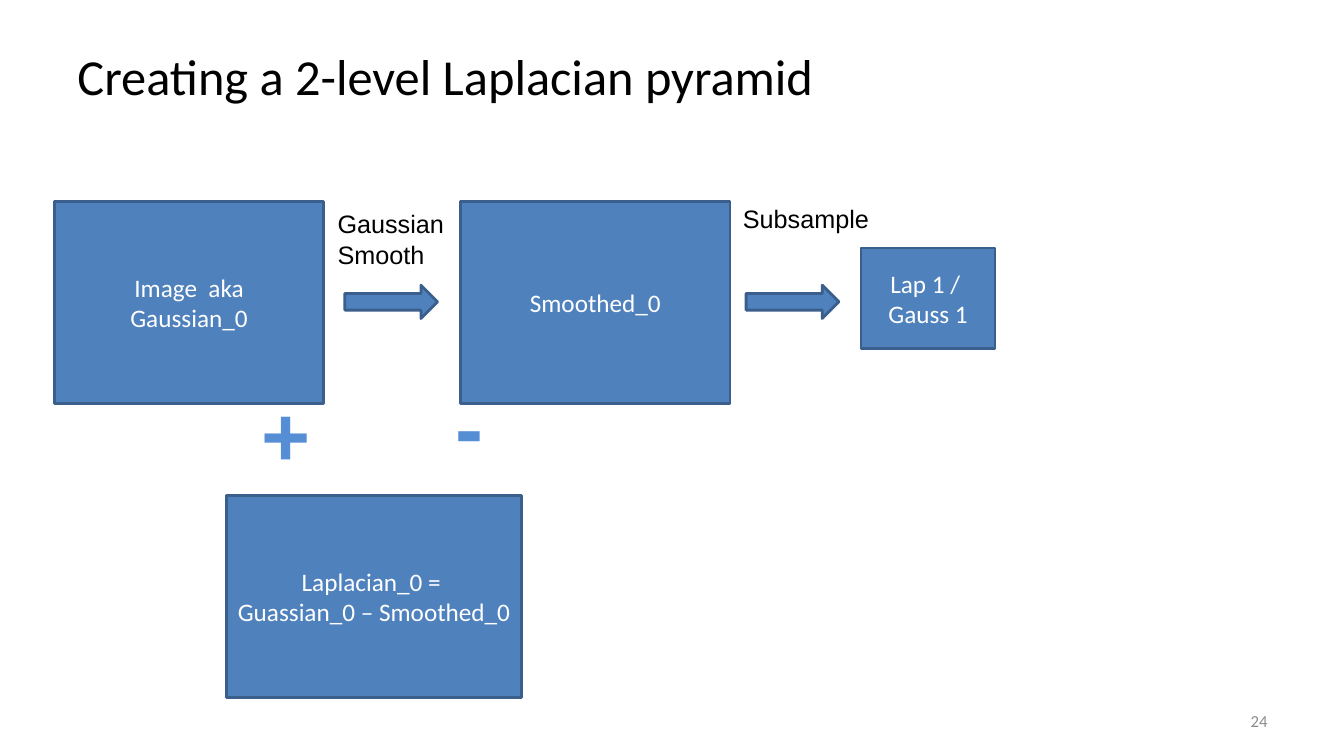
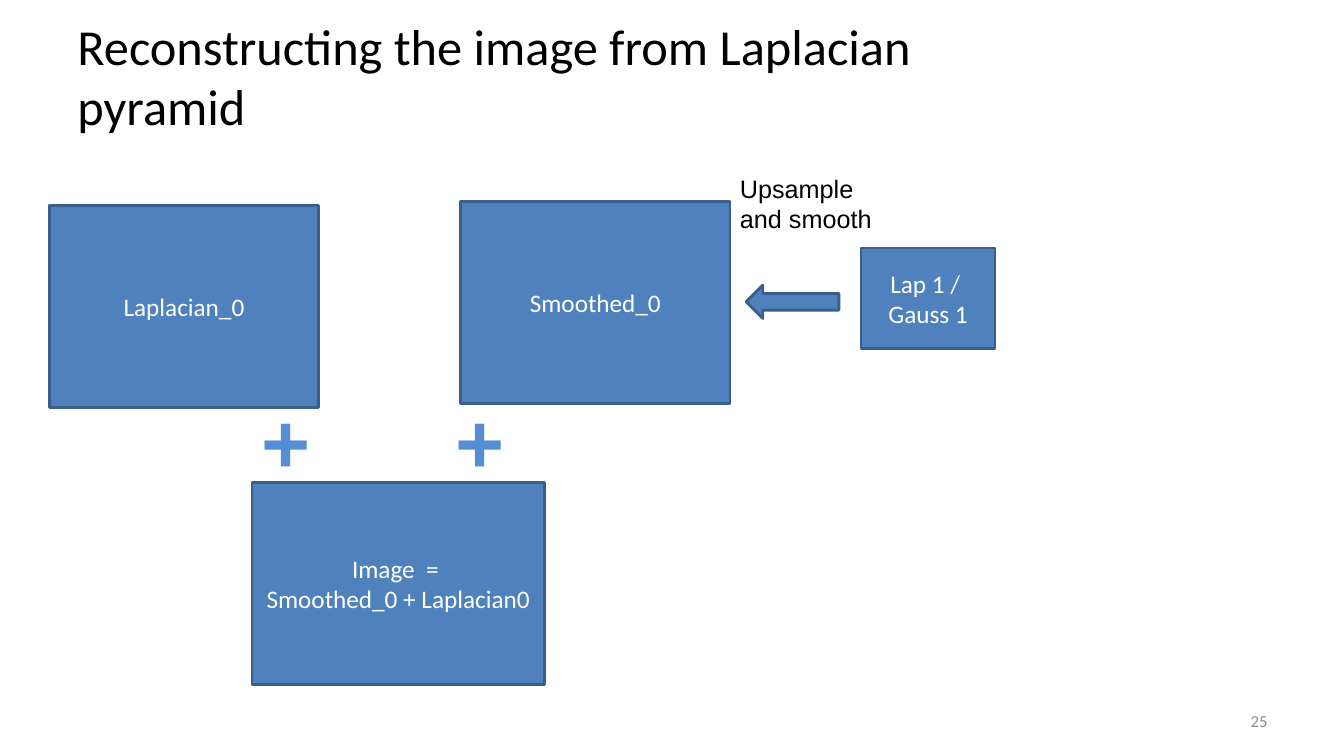
from pptx import Presentation
from pptx.dml.color import RGBColor
from pptx.enum.shapes import MSO_SHAPE
from pptx.enum.text import MSO_ANCHOR, PP_ALIGN
from pptx.util import Inches, Pt

BLACK = RGBColor(0x00, 0x00, 0x00)
WHITE = RGBColor(0xFF, 0xFF, 0xFF)
BLUE = RGBColor(0x4F, 0x81, 0xBD)
DARK_BLUE = RGBColor(0x3A, 0x5F, 0x8C)
SIGN_BLUE = RGBColor(0x55, 0x8E, 0xD5)
GREY = RGBColor(0x8C, 0x8C, 0x8C)

# Boxes are (left, top, width, height) in inches.
TITLE_BOX = (0.67, 0.25, 8.75, 1)
NUMBER_BOX = (9.56, 6.95, 3.11, 0.4)
SMOOTHED_BOX = (4.57, 2, 2.67, 2)
LEVEL_ONE_BOX = (8.54, 2.46, 1.33, 1)
ARROW_TOP, ARROW_WIDTH, ARROW_HEIGHT = 2.83, 0.92, 0.33
SUBSAMPLE_ARROW_LEFT = 7.4


def write_lines(shape, lines, size, color, font_name="Calibri", bold=False,
                align=PP_ALIGN.LEFT, anchor=MSO_ANCHOR.TOP, wrap=True):
    """Fill a shape with one paragraph per line, all in one style."""
    frame = shape.text_frame
    frame.word_wrap = wrap
    frame.vertical_anchor = anchor
    frame.text = "\n".join(lines)
    for paragraph in frame.paragraphs:
        paragraph.alignment = align
        font = paragraph.font
        font.name, font.size, font.bold = font_name, Pt(size), bold
        font.color.rgb = color


def add_text(slide, box, text, size, color, **style):
    text_box = slide.shapes.add_textbox(*map(Inches, box))
    write_lines(text_box, [text], size, color, **style)


def add_blue_shape(slide, kind, box):
    shape = slide.shapes.add_shape(kind, *map(Inches, box))
    shape.shadow.inherit = False
    shape.fill.solid()
    shape.fill.fore_color.rgb = BLUE
    shape.line.color.rgb = DARK_BLUE
    shape.line.width = Pt(2)
    return shape


def add_image_block(slide, box, *lines):
    block = add_blue_shape(slide, MSO_SHAPE.RECTANGLE, box)
    write_lines(block, lines, 18, WHITE,
                align=PP_ALIGN.CENTER, anchor=MSO_ANCHOR.MIDDLE)


def add_step(slide, arrow_kind, arrow_left, label, label_box):
    """Add a block arrow with the name of the operation above it."""
    arrow_box = (arrow_left, ARROW_TOP, ARROW_WIDTH, ARROW_HEIGHT)
    add_blue_shape(slide, arrow_kind, arrow_box)
    add_text(slide, label_box, label, 18, BLACK, font_name="Arial")


def add_sign(slide, sign, left, top):
    add_text(slide, (left, top, 0.69, 1.11), sign, 60, SIGN_BLUE,
             font_name="Arial", bold=True, wrap=False)


def add_pyramid_slide(presentation, title, number):
    """Add a slide with the title, page number and blocks common to both."""
    slide = presentation.slides.add_slide(presentation.slide_layouts[6])
    add_text(slide, TITLE_BOX, title, 36, BLACK, anchor=MSO_ANCHOR.MIDDLE)
    add_text(slide, NUMBER_BOX, str(number), 12, GREY,
             align=PP_ALIGN.RIGHT, anchor=MSO_ANCHOR.MIDDLE)
    add_image_block(slide, SMOOTHED_BOX, "Smoothed_0")
    add_image_block(slide, LEVEL_ONE_BOX, "Lap 1 / ", "Gauss 1")
    return slide


def build_creation_slide(presentation):
    slide = add_pyramid_slide(
        presentation, "Creating a 2-level Laplacian pyramid", 24)
    add_image_block(slide, (0.54, 2, 2.67, 2), "Image  aka", "Gaussian_0")
    add_step(slide, MSO_SHAPE.RIGHT_ARROW, 3.42,
             "Gaussian Smooth", (3.25, 2.02, 1.33, 0.71))
    add_step(slide, MSO_SHAPE.RIGHT_ARROW, SUBSAMPLE_ARROW_LEFT,
             "Subsample", (7.27, 1.97, 1.64, 0.4))
    add_image_block(slide, (2.25, 4.92, 2.92, 2),
                    "Laplacian_0 = ", "Guassian_0 – Smoothed_0")
    add_sign(slide, "+", 2.5, 3.75)
    add_sign(slide, "-", 4.42, 3.67)


def build_reconstruction_slide(presentation):
    slide = add_pyramid_slide(
        presentation, "Reconstructing the image from Laplacian pyramid", 25)
    add_image_block(slide, (0.49, 2.04, 2.67, 2), "Laplacian_0")
    add_step(slide, MSO_SHAPE.LEFT_ARROW, SUBSAMPLE_ARROW_LEFT,
             "Upsample and smooth", (7.24, 1.67, 1.64, 0.71))
    add_image_block(slide, (2.5, 4.79, 2.9, 2),
                    "Image  = ", "Smoothed_0 + Laplacian0")
    for left in (2.5, 4.42):
        add_sign(slide, "+", left, 3.81)


def main():
    presentation = Presentation()
    presentation.slide_width = Inches(13.33)
    presentation.slide_height = Inches(7.5)
    build_creation_slide(presentation)
    build_reconstruction_slide(presentation)
    presentation.save("out.pptx")


if __name__ == "__main__":
    main()
